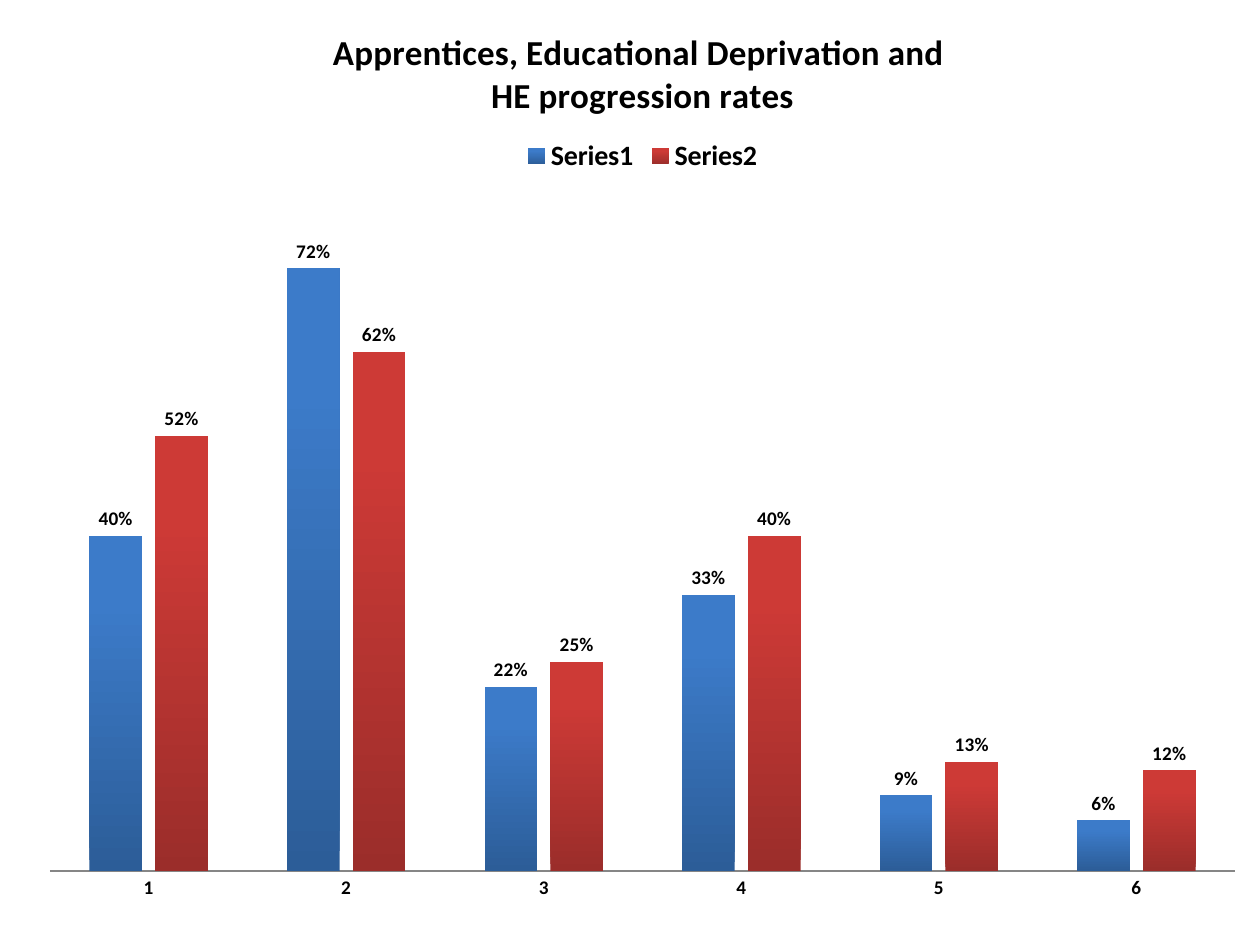
from lxml import etree
from pptx import Presentation
from pptx.chart.data import CategoryChartData
from pptx.dml.color import RGBColor
from pptx.enum.chart import (XL_CHART_TYPE, XL_LABEL_POSITION,
                             XL_LEGEND_POSITION, XL_TICK_MARK)
from pptx.oxml.ns import qn
from pptx.util import Inches, Pt

COLUMNS = XL_CHART_TYPE.COLUMN_CLUSTERED
OUTSIDE_END = XL_LABEL_POSITION.OUTSIDE_END
LEGEND_TOP = XL_LEGEND_POSITION.TOP
NO_TICK = XL_TICK_MARK.NONE

BLACK = RGBColor(0x00, 0x00, 0x00)
AXIS_GREY = RGBColor(0x86, 0x86, 0x86)
BLUE = RGBColor(0x3C, 0x7B, 0xC9)
DARK_BLUE = RGBColor(0x2C, 0x5D, 0x98)
RED = RGBColor(0xCD, 0x3A, 0x36)
DARK_RED = RGBColor(0x9B, 0x2D, 0x2A)

TITLE_LINES = ("Apprentices, Educational Deprivation and ", "HE progression rates")
CATEGORIES = ("1", "2", "3", "4", "5", "6")
SERIES = (
    ("Series1", (0.40, 0.72, 0.22, 0.33, 0.09, 0.06), DARK_BLUE, BLUE),
    ("Series2", (0.52, 0.62, 0.25, 0.40, 0.13, 0.12), DARK_RED, RED),
)


class SlideBuilder:
    font_name = "Calibri"

    def __init__(self, presentation):
        self.width = presentation.slide_width
        self.height = presentation.slide_height
        self.slide = presentation.slides.add_slide(presentation.slide_layouts[6])

    def style_font(self, font, size):
        font.name = self.font_name
        font.size = Pt(size)
        font.bold = True
        font.color.rgb = BLACK

    def add_column_chart(self, left, top, width, height, categories, series_rows):
        data = CategoryChartData(number_format="0%")
        data.categories = categories
        for name, values, _, _ in series_rows:
            data.add_series(name, values)
        frame = self.slide.shapes.add_chart(
            COLUMNS, round(left * self.width), round(top * self.height),
            round(width * self.width), round(height * self.height), data)
        chart = frame.chart
        self.style_font(chart.font, 11)
        plot = chart.plots[0]
        plot.gap_width = 150
        plot.overlap = -25
        plot.vary_by_categories = False
        for series, (_, _, dark, light) in zip(plot.series, series_rows):
            self.style_series(series, dark, light)
        return chart

    def style_series(self, series, dark, light):
        series.invert_if_negative = False
        fill = series.format.fill
        fill.gradient()
        fill.gradient_angle = 90
        for stop, color, position in zip(fill.gradient_stops, (dark, light), (0, 0.8)):
            stop.color.rgb = color
            stop.position = position
        labels = series.data_labels
        labels.show_value = True
        labels.number_format = "0%"
        labels.number_format_is_linked = False
        labels.position = OUTSIDE_END
        self.style_font(labels.font, 11)

    def add_title(self, chart, lines, size):
        text_frame = chart.chart_title.text_frame
        for index, line in enumerate(lines):
            paragraph = text_frame.add_paragraph() if index else text_frame.paragraphs[0]
            run = paragraph.add_run()
            run.text = line
            self.style_font(run.font, size)
        chart.chart_title.include_in_layout = False

    def add_legend(self, chart, size):
        chart.has_legend = True
        chart.legend.position = LEGEND_TOP
        chart.legend.include_in_layout = False
        self.style_font(chart.legend.font, size)

    def style_axes(self, chart, maximum):
        category_axis = chart.category_axis
        category_axis.major_tick_mark = NO_TICK
        category_axis.minor_tick_mark = NO_TICK
        category_axis.format.line.color.rgb = AXIS_GREY
        category_axis.format.line.width = Pt(1)
        self.style_font(category_axis.tick_labels.font, 11)
        value_axis = chart.value_axis
        value_axis.minimum_scale = 0
        value_axis.maximum_scale = maximum
        value_axis.has_major_gridlines = False
        value_axis.visible = False

    def place_plot(self, chart, left, top, width, height):
        plot_area = chart.plots[0]._element.getparent()
        for old_layout in plot_area.findall(qn("c:layout")):
            plot_area.remove(old_layout)
        layout = etree.Element(qn("c:layout"))
        manual = etree.SubElement(layout, qn("c:manualLayout"))
        settings = (("layoutTarget", "inner"), ("xMode", "edge"), ("yMode", "edge"),
                    ("x", left), ("y", top), ("w", width), ("h", height))
        for tag, value in settings:
            etree.SubElement(manual, qn(f"c:{tag}")).set("val", str(value))
        plot_area.insert(0, layout)


def main():
    presentation = Presentation()
    presentation.slide_width = Inches(10)
    presentation.slide_height = Inches(7.5)
    builder = SlideBuilder(presentation)
    chart = builder.add_column_chart(0.02, 0, 0.98, 0.97, CATEGORIES, SERIES)
    builder.add_title(chart, TITLE_LINES, 20)
    builder.add_legend(chart, 16)
    builder.style_axes(chart, 0.8)
    builder.place_plot(chart, 0.02, 0.22, 0.96, 0.73)
    presentation.save("out.pptx")


if __name__ == "__main__":
    main()
